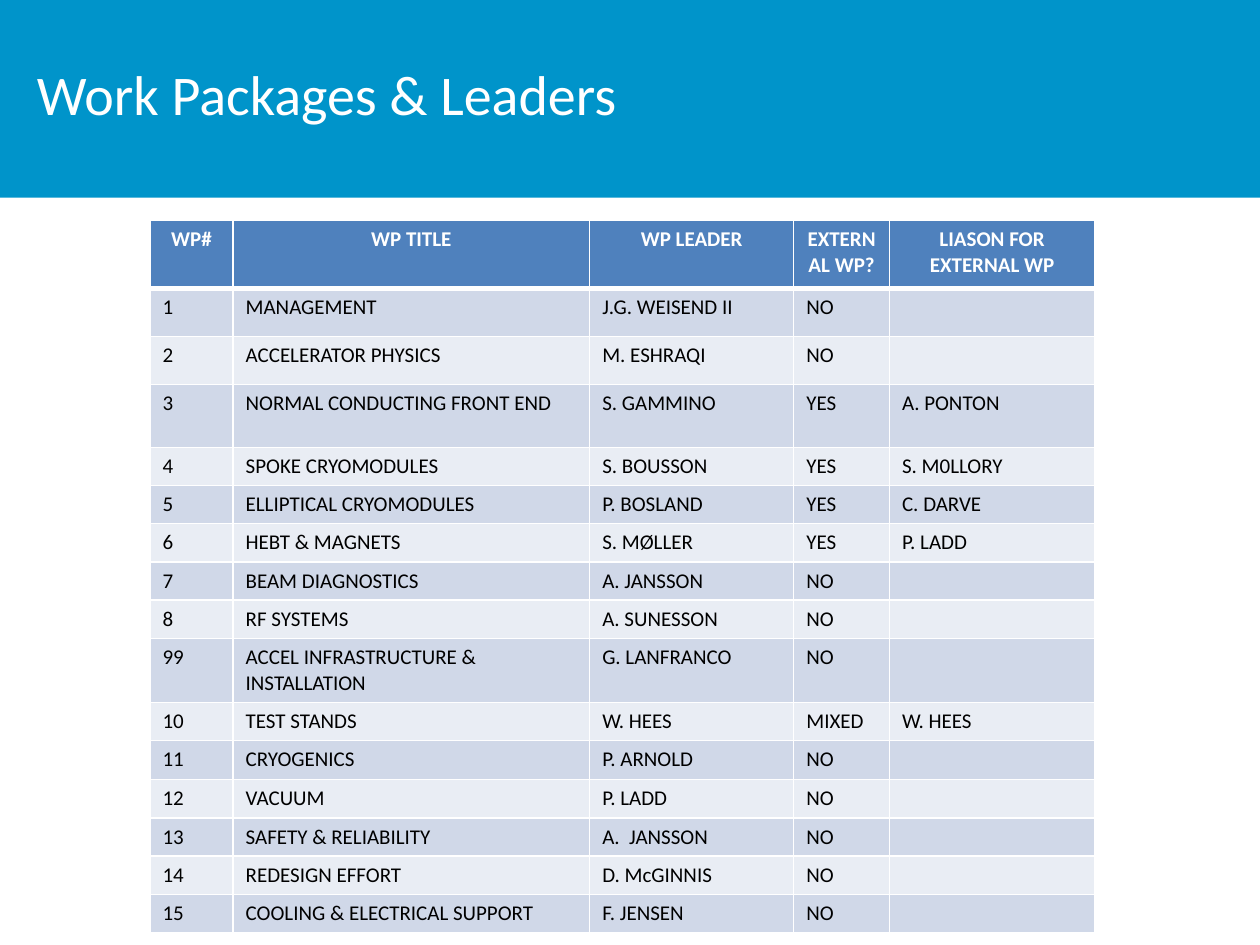
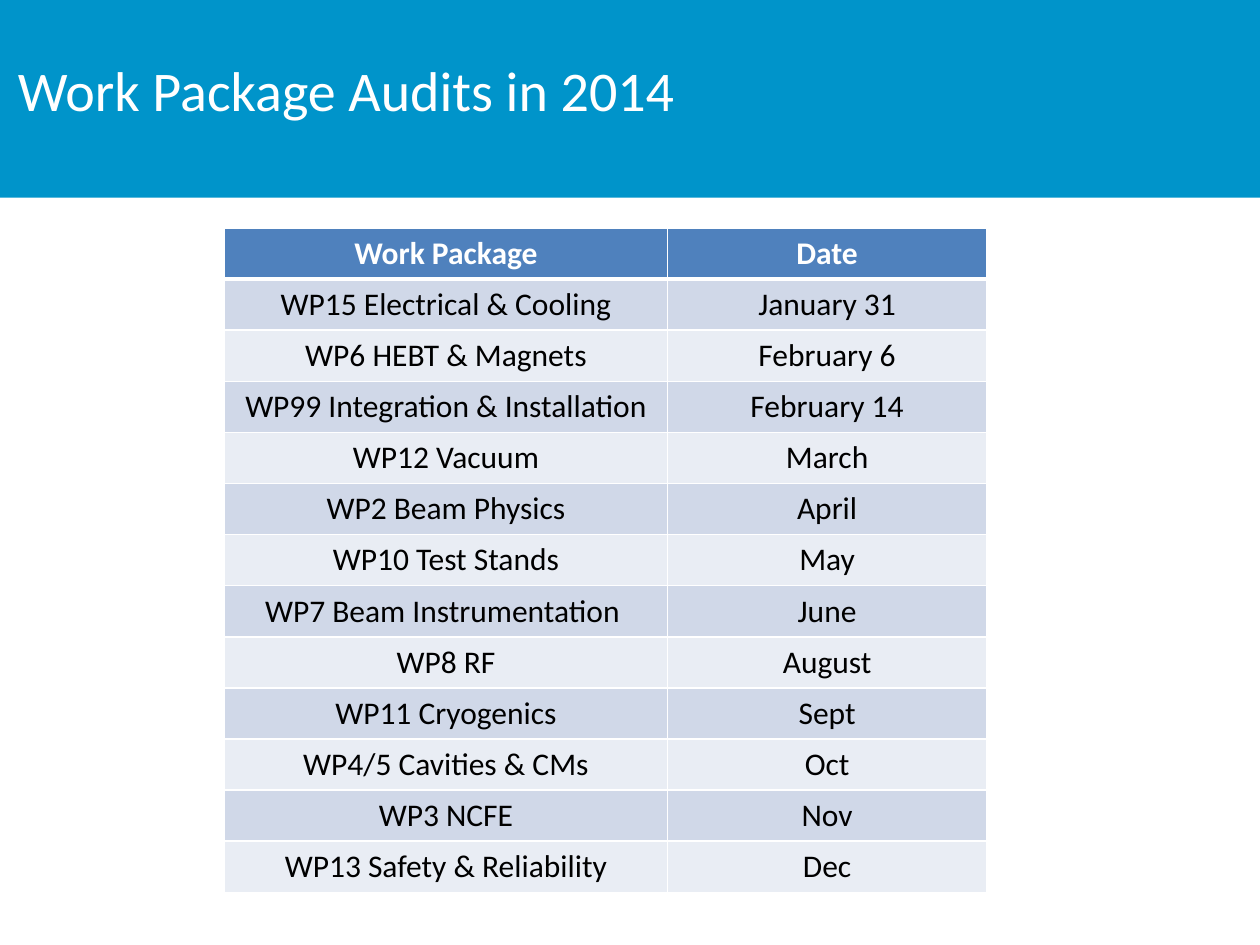
from lxml import etree
from pptx import Presentation, util as u
from pptx.dml.color import RGBColor
from pptx.enum import shapes, text
from pptx.oxml.ns import qn

COLS, ROWS = 100, 75
WHITE, BLACK, BAND, HEADER = "FFFFFF", "000000", "0094CA", "4F81BD"
STRIPES = ("D0D8E8", "E9EDF4")
FONT = "Calibri"
CENTER, LEFT = text.PP_ALIGN.CENTER, text.PP_ALIGN.LEFT

WP_LEADERS = [
    ("WP#", "WP TITLE", "WP LEADER", "EXTERNAL WP?", "LIASON FOR EXTERNAL WP"),
    ("1", "MANAGEMENT", "J.G. WEISEND II", "NO", ""),
    ("2", "ACCELERATOR PHYSICS", "M. ESHRAQI", "NO", ""),
    ("3", "NORMAL CONDUCTING FRONT END", "S. GAMMINO", "YES", "A. PONTON"),
    ("4", "SPOKE CRYOMODULES", "S. BOUSSON", "YES", "S. M0LLORY"),
    ("5", "ELLIPTICAL CRYOMODULES", "P. BOSLAND", "YES", "C. DARVE"),
    ("6", "HEBT & MAGNETS", "S. MØLLER", "YES", "P. LADD"),
    ("7", "BEAM DIAGNOSTICS", "A. JANSSON", "NO", ""),
    ("8", "RF SYSTEMS", "A. SUNESSON", "NO", ""),
    ("99", "ACCEL INFRASTRUCTURE & INSTALLATION", "G. LANFRANCO", "NO", ""),
    ("10", "TEST STANDS", "W. HEES", "MIXED", "W. HEES"),
    ("11", "CRYOGENICS", "P. ARNOLD", "NO", ""),
    ("12", "VACUUM", "P. LADD", "NO", ""),
    ("13", "SAFETY & RELIABILITY", "A.  JANSSON", "NO", ""),
    ("14", "REDESIGN EFFORT", "D. McGINNIS", "NO", ""),
    ("15", "COOLING & ELECTRICAL SUPPORT", "F. JENSEN", "NO", ""),
]
LEADER_ROWS = [5.4, 3.8, 3.8, 5] + [3] * 5 + [5, 3, 3.1] + [3] * 4

AUDITS = [
    ("Work Package", "Date"),
    ("WP15 Electrical & Cooling", "January 31"),
    ("WP6 HEBT & Magnets", "February 6"),
    ("WP99 Integration & Installation", "February 14"),
    ("WP12 Vacuum", "March"),
    ("WP2 Beam Physics", "April"),
    ("WP10 Test Stands", "May"),
    ("WP7 Beam Instrumentation ", "June"),
    ("WP8 RF", "August"),
    ("WP11 Cryogenics", "Sept"),
    ("WP4/5 Cavities & CMs", "Oct"),
    ("WP3 NCFE", "Nov"),
    ("WP13 Safety & Reliability", "Dec"),
]


def rgb(code):
    return RGBColor.from_string(code)


def border(cell, side, width):
    ln = etree.SubElement(cell._tc.get_or_add_tcPr(), qn(f"a:ln{side}"), w=str(u.Pt(width)))
    fill = etree.SubElement(ln, qn("a:solidFill"))
    etree.SubElement(fill, qn("a:srgbClr"), val=WHITE)


class Deck:
    """Holds the presentation, its style and the current slide."""

    def __init__(self):
        self.prs = Presentation()
        self.prs.slide_width, self.prs.slide_height = u.Inches(10), u.Inches(7.5)

    def x(self, cols):
        return round(self.prs.slide_width * cols / COLS)

    def y(self, rows):
        return round(self.prs.slide_height * rows / ROWS)

    def box(self, left, top, width, height):
        return self.x(left), self.y(top), self.x(width), self.y(height)

    def label(self, p, words, size, color, align, bold=False):
        p.text = words
        p.alignment = align
        p.font.name, p.font.size, p.font.bold = FONT, u.Pt(size), bold
        p.font.color.rgb = rgb(color)
        if not words:  # keeps an empty cell from growing to the default size
            etree.SubElement(p._p, qn("a:endParaRPr"), sz=str(size * 100))

    def slide(self, title, *place):
        self.s = self.prs.slides.add_slide(self.prs.slide_layouts[5])
        self.band()
        sp = self.s.shapes.title
        sp.left, sp.top, sp.width, sp.height = self.box(*place)
        tf = sp.text_frame
        tf.word_wrap = False
        tf.auto_size = text.MSO_AUTO_SIZE.NONE
        tf.vertical_anchor = text.MSO_ANCHOR.TOP
        self.label(tf.paragraphs[0], title, 32, WHITE, CENTER)

    def band(self):
        """Draw the heading band behind the title."""
        sp = self.s.shapes.add_shape(shapes.MSO_SHAPE.RECTANGLE, *self.box(0, 0, COLS, 15.7))
        sp.shadow.inherit = False
        sp.fill.solid()
        sp.fill.fore_color.rgb = rgb(BAND)
        sp.line.fill.background()
        self.s.shapes._spTree.insert(2, sp._element)

    def table(self, data, left, top, widths, heights, size, body_align):
        place = self.box(left, top, sum(widths), sum(heights))
        table = self.s.shapes.add_table(len(data), len(widths), *place).table
        for column, width in zip(table.columns, widths):
            column.width = self.x(width)
        for i, (row, height, values) in enumerate(zip(table.rows, heights, data)):
            row.height = self.y(height)
            for cell, value in zip(row.cells, values):
                self.cell(cell, value, i, size, body_align)

    def cell(self, cell, value, row, size, body_align):
        head = row == 0
        for side, width in (("L", 1), ("R", 1), ("T", 3 if row == 1 else 1), ("B", 3 if head else 1)):
            border(cell, side, width)
        cell.fill.solid()
        cell.fill.fore_color.rgb = rgb(HEADER if head else STRIPES[(row - 1) % 2])
        self.label(cell.text_frame.paragraphs[0], value, size, WHITE if head else BLACK,
                   CENTER if head else body_align, bold=head)


def main():
    deck = Deck()
    deck.slide("Work Packages & Leaders", 1.5, 4.2, 48.9, 6.4)
    deck.table(WP_LEADERS, 11.9, 17.5, [6.6, 28.3, 16.2, 7.6, 16.3], LEADER_ROWS, 12, LEFT)
    deck.slide("Work Package Audits in 2014", 0, 3.9, 55, 6.4)
    deck.table(AUDITS, 17.8, 18.1, [35.2, 25.3], [4] * len(AUDITS), 18, CENTER)
    deck.prs.save("out.pptx")


if __name__ == "__main__":
    main()
